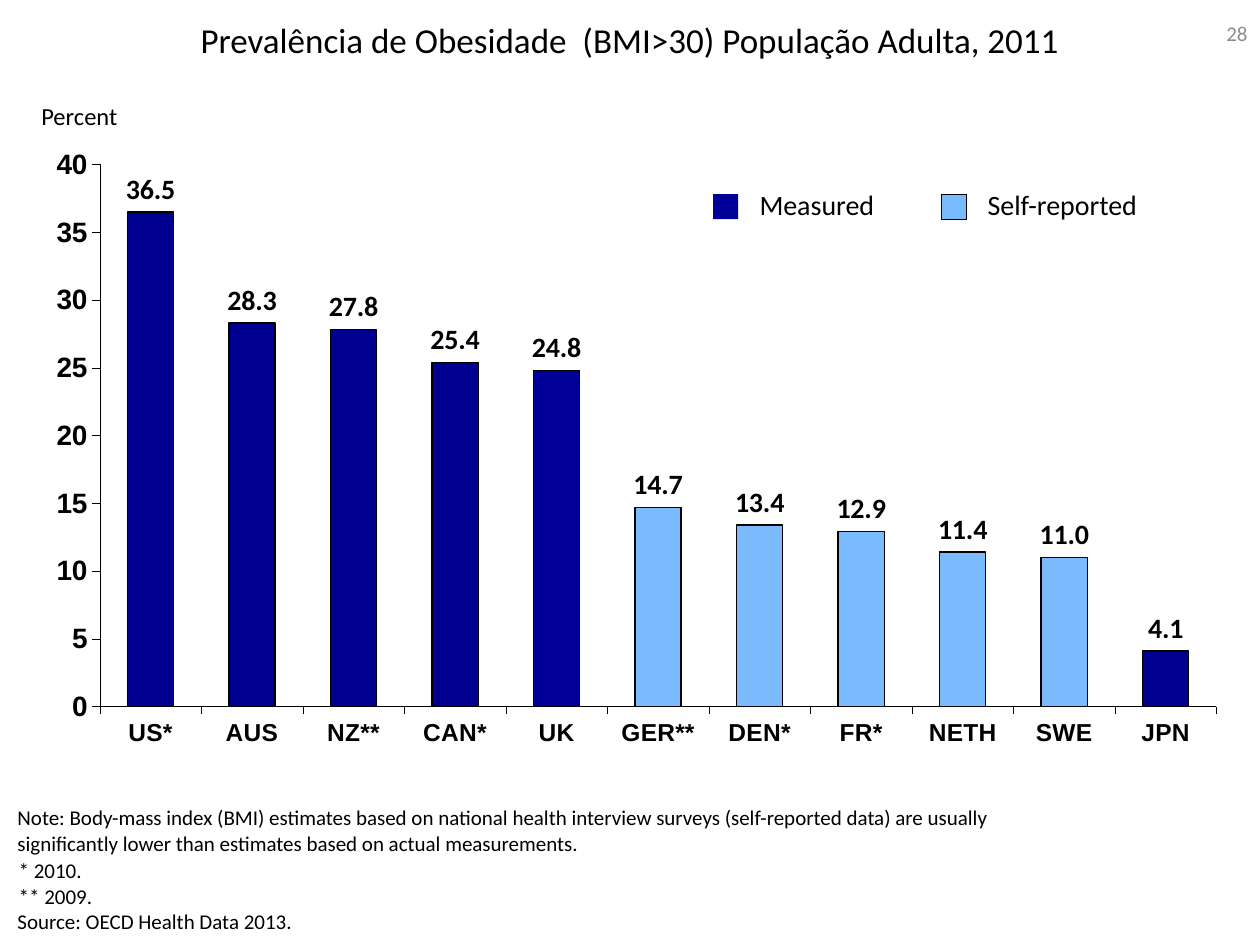
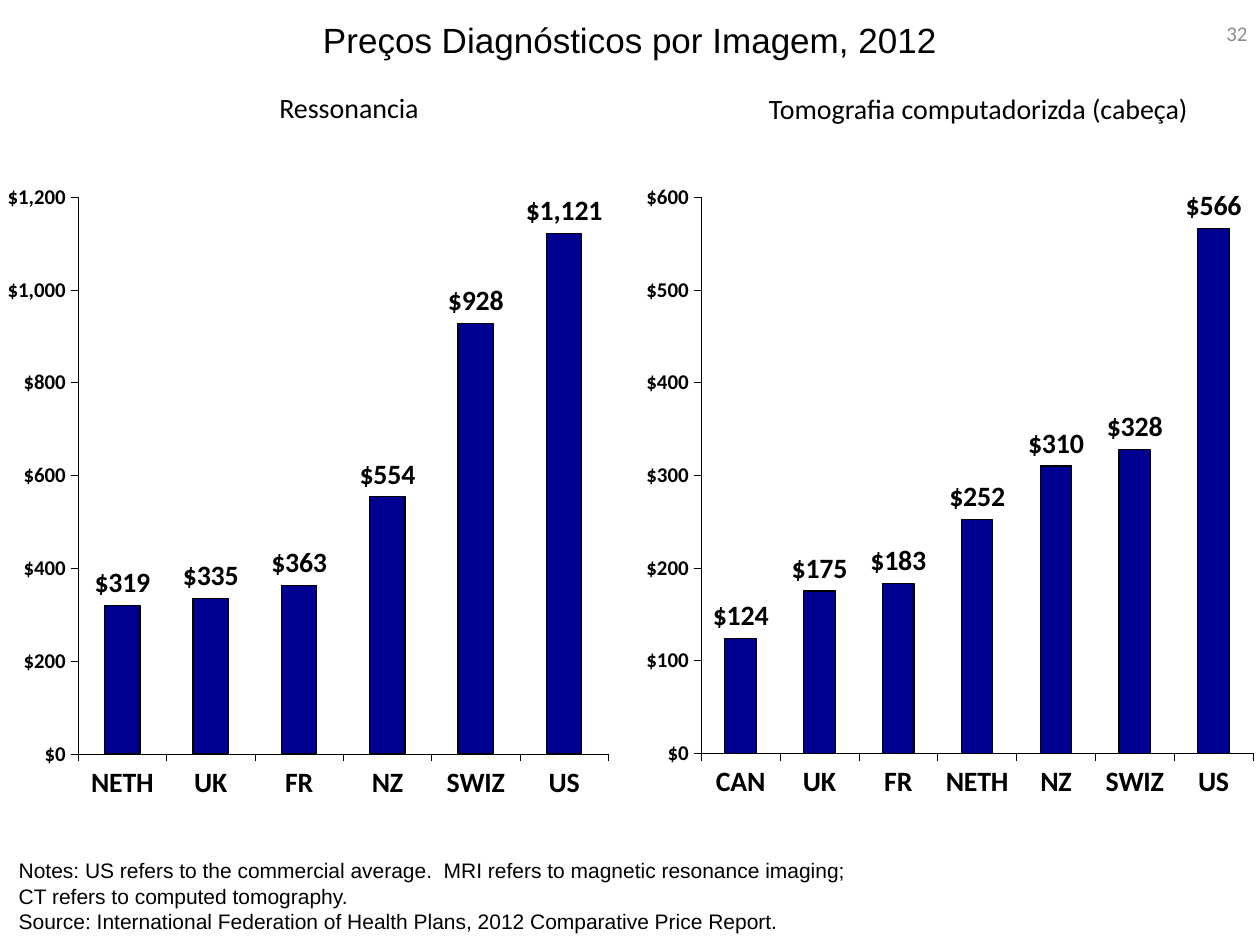
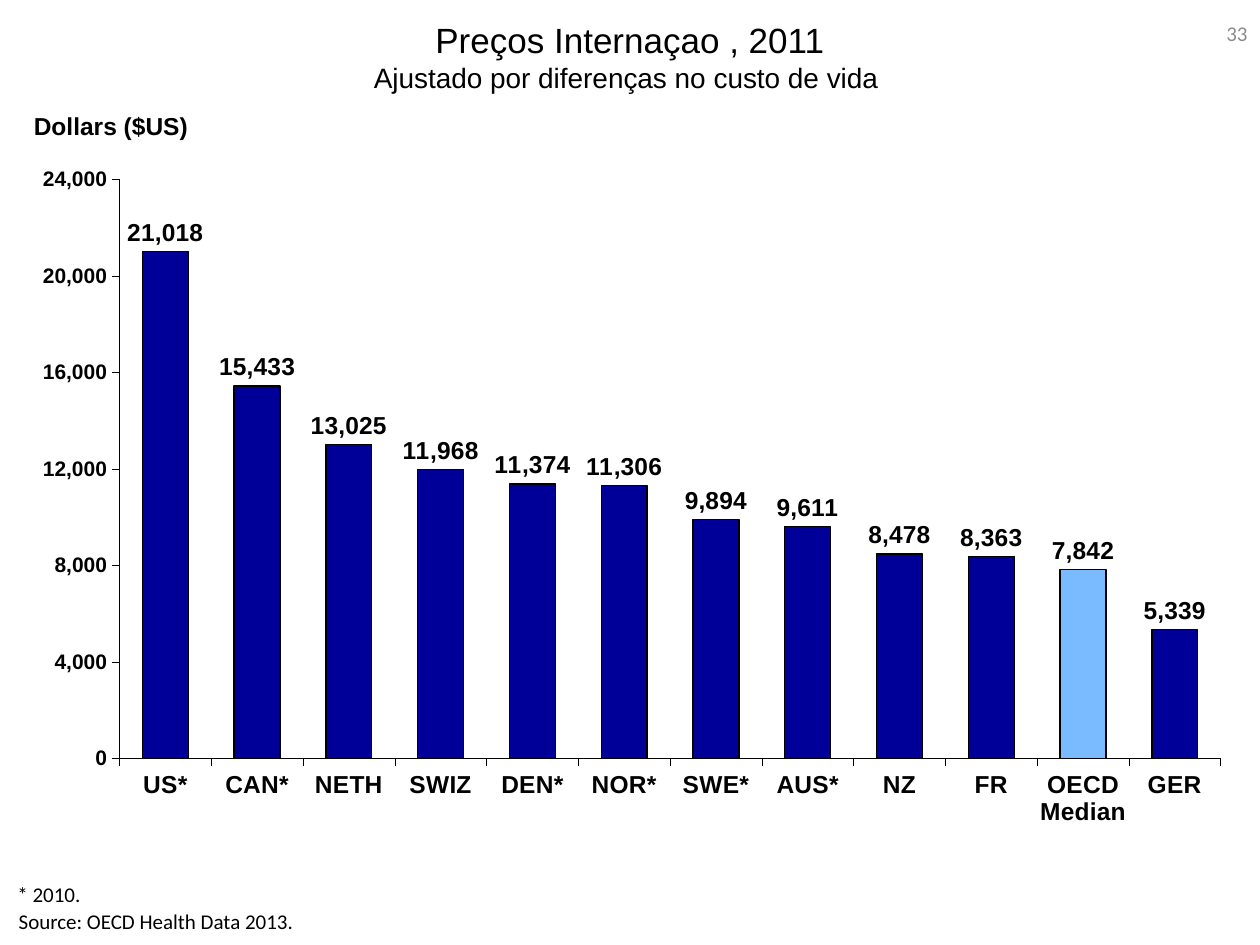
from dataclasses import dataclass

from lxml import etree
from pptx import Presentation
from pptx import util as u
from pptx.chart.data import CategoryChartData
from pptx.dml.color import RGBColor
from pptx.enum import chart as charts
from pptx.enum import shapes, text
from pptx.oxml.ns import qn


@dataclass(frozen=True)
class Theme:
    ink: str = "000000"
    muted: str = "8C8C8C"
    navy: str = "000090"
    deep_blue: str = "000099"
    sky: str = "7ABAFF"
    sans: str = "Calibri"
    plain: str = "Arial"
    title: int = 20
    heading: int = 16
    label: int = 14
    note: int = 12
    outline: float = 0.75
    hairline: float = 0.25


THEME = Theme()
COLUMNS, ROWS = 100, 75
WIDTH, HEIGHT = u.Inches(10), u.Inches(7.5)
SOURCE = "Source: OECD Health Data 2013."

PRICE_CHART = dict(
    color=THEME.navy, gap=150, format='"$"#,##0', axis_font=THEME.sans,
    label_font=THEME.sans, category_size=THEME.heading,
    value_size=THEME.note, label_size=THEME.heading,
)

SLIDES = [
    dict(
        number=28,
        title="Prevalência de Obesidade  (BMI>30) População Adulta, 2011",
        title_format=dict(font=THEME.sans),
        title_rows=4.4,
        charts=[dict(
            area=(3, 9.7, 94.6, 51.6), plot=(0.052, 0.065, 0.937, 0.834),
            data={"US*": 36.5, "AUS": 28.3, "NZ**": 27.8, "CAN*": 25.4,
                  "UK": 24.8, "GER**": 14.7, "DEN*": 13.4, "FR*": 12.9,
                  "NETH": 11.4, "SWE": 11.0, "JPN": 4.1},
            accents={"UK": THEME.deep_blue} | dict.fromkeys(
                ["GER**", "DEN*", "FR*", "NETH", "SWE"], THEME.sky),
            color=THEME.navy, gap=120, top=40, step=5, format="0.0",
            axis_format="General", axis_font=THEME.plain,
            label_font=THEME.sans, category_size=THEME.label,
            value_size=THEME.heading, label_size=THEME.heading,
        )],
        legend=[("Measured", 56.6, THEME.deep_blue, None),
                ("Self-reported", 74.7, THEME.sky, THEME.ink)],
        texts=[
            ("Percent", (2.3, 7.5, 13.3, 3.4), dict(size=THEME.label)),
            ("Note: Body-mass index (BMI) estimates based on national health "
             "interview surveys (self-reported data) are usually significantly "
             "lower than estimates based on actual measurements.",
             (0.4, 63.4, 79.6, 5), {}),
            (["* 2010.", "** 2009."], (0.5, 67.6, 8, 5), dict(wrap=False)),
            (SOURCE, (0.4, 71.6, 40.6, 3), {}),
        ],
    ),
    dict(
        number=32,
        title="Preços Diagnósticos por Imagem, 2012",
        title_format=dict(font=THEME.plain),
        title_rows=5,
        charts=[
            PRICE_CHART | dict(
                area=(0.6, 14, 47.7, 53.3), plot=(0.112, 0.031, 0.888, 0.829),
                data={"NETH": 319, "UK": 335, "FR": 363, "NZ": 554,
                      "SWIZ": 928, "US": 1121}, top=1200, step=200),
            PRICE_CHART | dict(
                area=(51.3, 14, 48.2, 53.3), plot=(0.088, 0.031, 0.911, 0.828),
                data={"CAN": 124, "UK": 175, "FR": 183, "NETH": 252,
                      "NZ": 310, "SWIZ": 328, "US": 566}, top=600, step=100),
        ],
        texts=[
            ("Ressonancia", (9.3, 6.7, 36.8, 3.7),
             dict(size=THEME.heading, align=text.PP_ALIGN.CENTER)),
            ("Tomografia computadorizda (cabeça)", (56.8, 6.8, 41.7, 3.7),
             dict(size=THEME.heading, align=text.PP_ALIGN.CENTER)),
            (["Notes: US refers to the commercial average.  MRI refers to "
              "magnetic resonance imaging;\nCT refers to computed tomography.",
              "Source: International Federation of Health Plans, 2012 "
              "Comparative Price Report."],
             (0.5, 67.6, 88.8, 7.1), dict(font=THEME.plain)),
        ],
    ),
    dict(
        number=33,
        title="Preços Internaçao , 2011\nAjustado por diferenças no custo de vida ",
        title_format=dict(font=THEME.plain, second_size=THEME.heading),
        title_rows=8,
        charts=[dict(
            area=(2.5, 10.1, 94.4, 56.7), plot=(0.074, 0.073, 0.926, 0.811),
            data={"US*": 21018, "CAN*": 15433, "NETH": 13025, "SWIZ": 11968,
                  "DEN*": 11374, "NOR*": 11306, "SWE*": 9894, "AUS*": 9611,
                  "NZ": 8478, "FR": 8363, "OECD Median": 7842, "GER": 5339},
            accents={"OECD Median": THEME.sky}, color=THEME.deep_blue,
            gap=100, top=24000, step=4000, format="#,##0",
            axis_font=THEME.plain, label_font=THEME.plain,
            category_size=THEME.label, value_size=THEME.note,
            label_size=THEME.label,
        )],
        texts=[
            ("Dollars ($US)", (1.7, 8.3, 14.3, 3.4),
             dict(size=THEME.label, font=THEME.plain, bold=True, wrap=False)),
            ("* 2010.", (0.4, 69.5, 7.3, 3), dict(wrap=False)),
            (SOURCE, (0.5, 71.6, 40.6, 3), {}),
        ],
    ),
]


def grid(column, row, columns, rows):
    return (int(WIDTH * column / COLUMNS), int(HEIGHT * row / ROWS),
            int(WIDTH * columns / COLUMNS), int(HEIGHT * rows / ROWS))


def style_font(font, name, size, bold=False, color=THEME.ink):
    font.name = name
    font.size = u.Pt(size)
    font.bold = bold
    font.color.rgb = RGBColor.from_string(color)


def paint(part, fill, line=None, width=THEME.outline):
    part.fill.solid()
    part.fill.fore_color.rgb = RGBColor.from_string(fill)
    if line:
        part.line.color.rgb = RGBColor.from_string(line)
        part.line.width = u.Pt(width)
    else:
        part.line.fill.background()


def write(box, content, size=THEME.note, second_size=None, font=THEME.sans,
          color=THEME.ink, bold=False, align=text.PP_ALIGN.LEFT,
          anchor=text.MSO_ANCHOR.TOP, wrap=True):
    frame = box.text_frame
    frame.word_wrap = wrap
    frame.auto_size = text.MSO_AUTO_SIZE.NONE
    frame.vertical_anchor = anchor
    lines = [content] if isinstance(content, str) else content
    for index, line in enumerate(lines):
        para = frame.add_paragraph() if index else frame.paragraphs[0]
        para.text = line
        para.alignment = align
        for order, span in enumerate(para.runs):
            span_size = second_size if order and second_size else size
            style_font(span.font, font, span_size, bold, color)


def add_text(page, content, area, **style):
    write(page.shapes.add_textbox(*grid(*area)), content, **style)


def set_plot_area(chart, shares):
    plot_area = chart._chartSpace.chart.plotArea
    for old in plot_area.findall(qn("c:layout")):
        plot_area.remove(old)
    layout = etree.Element(qn("c:layout"))
    plot_area.insert(0, layout)
    manual = etree.SubElement(layout, qn("c:manualLayout"))
    settings = [("layoutTarget", "inner"), ("xMode", "edge"), ("yMode", "edge")]
    settings += zip("xywh", shares)
    for name, value in settings:
        etree.SubElement(manual, qn(f"c:{name}")).set("val", str(value))


def style_axis(axis, font, size):
    axis.has_major_gridlines = False
    axis.major_tick_mark = charts.XL_TICK_MARK.OUTSIDE
    axis.minor_tick_mark = charts.XL_TICK_MARK.NONE
    axis.format.line.color.rgb = RGBColor.from_string(THEME.ink)
    axis.format.line.width = u.Pt(THEME.hairline)
    style_font(axis.tick_labels.font, font, size, bold=True)


def add_columns(page, item):
    data = CategoryChartData()
    data.categories = list(item["data"])
    data.add_series("Series 1", item["data"].values())
    chart = page.shapes.add_chart(
        charts.XL_CHART_TYPE.COLUMN_CLUSTERED, *grid(*item["area"]), data).chart
    chart.has_legend = False
    chart.has_title = False
    style_font(chart.font, item["axis_font"], THEME.label)
    set_plot_area(chart, item["plot"])

    style_axis(chart.category_axis, item["axis_font"], item["category_size"])
    values = chart.value_axis
    style_axis(values, item["axis_font"], item["value_size"])
    values.minimum_scale = 0
    values.maximum_scale = item["top"]
    values.major_unit = item["step"]
    values.tick_labels.number_format = item.get("axis_format", item["format"])
    values.tick_labels.number_format_is_linked = False

    plot = chart.plots[0]
    plot.gap_width = item["gap"]
    plot.vary_by_categories = False
    series = plot.series[0]
    series.invert_if_negative = False
    paint(series.format, item["color"], THEME.ink)
    categories = list(item["data"])
    for name, color in item.get("accents", {}).items():
        paint(series.points[categories.index(name)].format, color, THEME.ink)

    labels = series.data_labels
    labels.show_value = True
    labels.position = charts.XL_LABEL_POSITION.OUTSIDE_END
    labels.number_format = item["format"]
    labels.number_format_is_linked = False
    style_font(labels.font, item["label_font"], item["label_size"], bold=True)


def add_legend_entry(page, name, column, fill, line):
    swatch = page.shapes.add_shape(
        shapes.MSO_SHAPE.RECTANGLE, *grid(column, 15.4, 2, 2))
    swatch.shadow.inherit = False
    paint(swatch, fill, line, THEME.hairline)
    add_text(page, name, (column + 2.7, 14.4, 18.3, 3.7), size=THEME.heading)


def build_slide(deck, content):
    page = deck.slides.add_slide(deck.slide_layouts.get_by_name("Title Only"))
    title = page.shapes.title
    title.left, title.top, title.width, title.height = grid(
        0, 1, COLUMNS, content["title_rows"])
    write(title, content["title"], size=THEME.title,
          align=text.PP_ALIGN.CENTER, **content["title_format"])
    for item in content["charts"]:
        add_columns(page, item)
    for entry in content.get("legend", []):
        add_legend_entry(page, *entry)
    for words, area, style in content["texts"]:
        add_text(page, words, area, **style)
    add_text(page, str(content["number"]), (76.7, 0, 23.3, 5.2),
             color=THEME.muted, align=text.PP_ALIGN.RIGHT,
             anchor=text.MSO_ANCHOR.MIDDLE)


def main():
    deck = Presentation()
    deck.slide_width, deck.slide_height = WIDTH, HEIGHT
    for content in SLIDES:
        build_slide(deck, content)
    deck.save("out.pptx")


if __name__ == "__main__":
    main()
